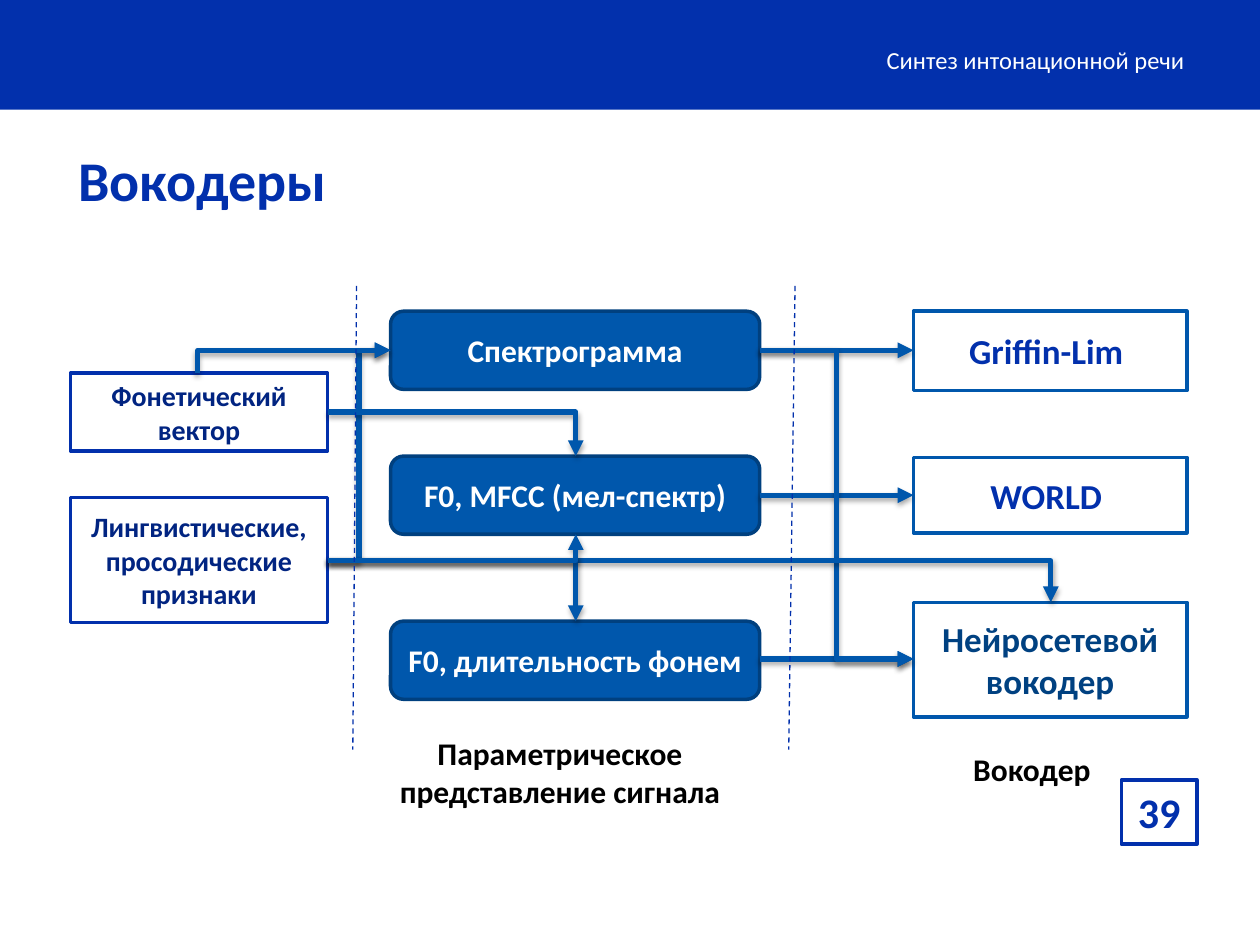
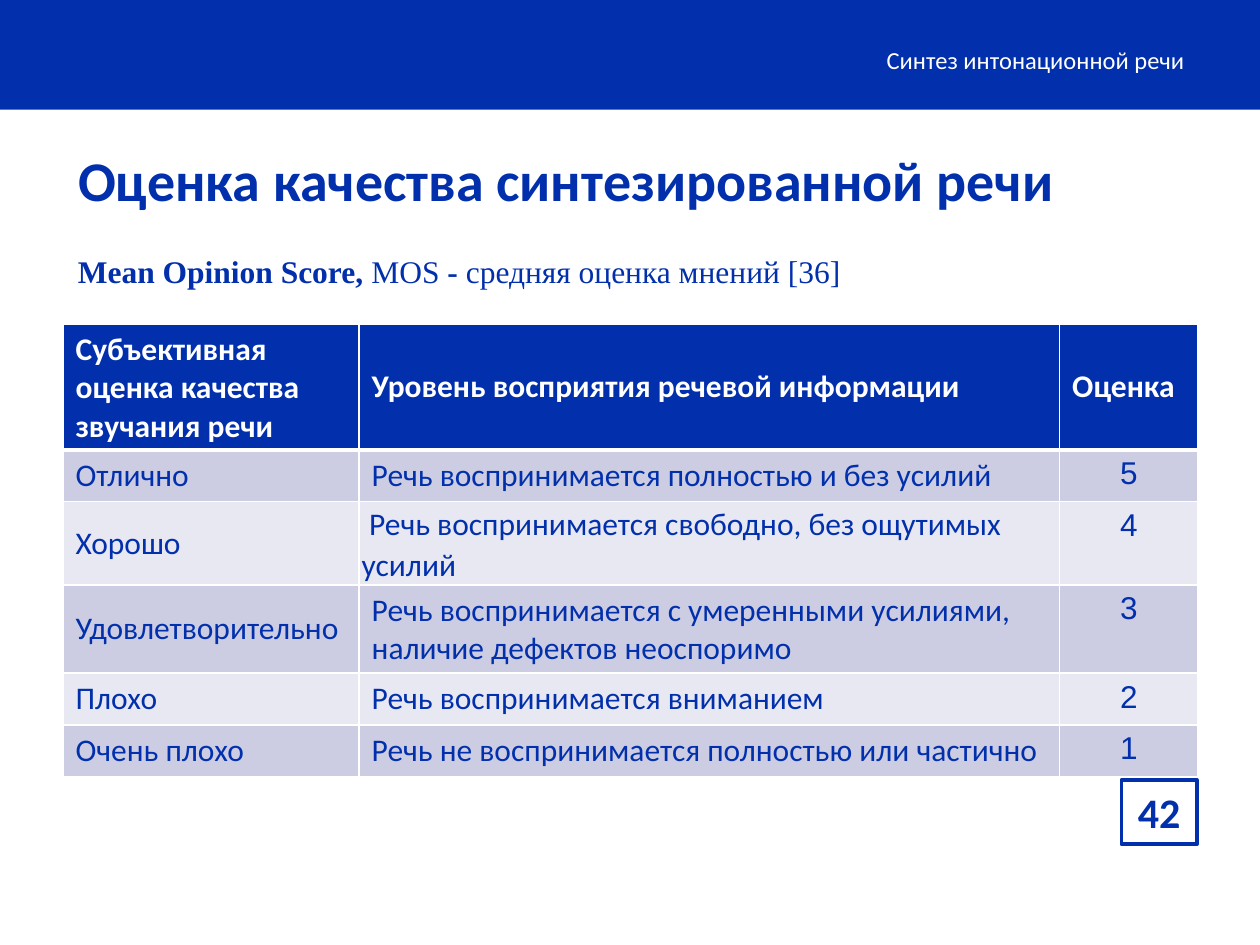
from dataclasses import dataclass

from lxml import etree
from pptx import Presentation
from pptx.dml.color import RGBColor
from pptx.enum.dml import MSO_LINE
from pptx.enum.shapes import MSO_CONNECTOR as Link, MSO_SHAPE as Form
from pptx.enum.text import MSO_ANCHOR as Anchor, PP_ALIGN as Align
from pptx.oxml.ns import qn
from pptx.util import Inches, Pt


@dataclass(frozen=True)
class Theme:
    brand: str = "0230AC"
    accent: str = "0057AC"
    accent_edge: str = "00407F"
    feature_text: str = "012481"
    neural_text: str = "004181"
    white: str = "FFFFFF"
    black: str = "000000"
    row_dark: str = "CCCDE3"
    row_light: str = "E7E8F1"
    sans: str = "Calibri"
    serif: str = "Times New Roman"
    digits: str = "Arial"
    title: int = 32
    number: int = 24
    vocoder: int = 20
    text: int = 18
    feature: int = 16
    header: int = 14


THEME = Theme()


def assign(target, **values):
    for name, value in values.items():
        setattr(target, name, value)


def style_font(font, size, color, bold=False, name=THEME.sans):
    assign(font, size=Pt(size), bold=bold, name=name)
    font.color.rgb = RGBColor.from_string(color)


def write(frame, text, size, color, bold=True, align=Align.CENTER, anchor=Anchor.MIDDLE):
    assign(frame, word_wrap=True, vertical_anchor=anchor)
    para = frame.paragraphs[0]
    para.alignment = align
    span = para.add_run()
    span.text = text
    style_font(span.font, size, color, bold)


def add_box(page, area, fill, edge=None, form=Form.RECTANGLE):
    box = page.shapes.add_shape(form, *map(Inches, area))
    box.shadow.inherit = False
    box.fill.solid()
    box.fill.fore_color.rgb = RGBColor.from_string(fill)
    if edge:
        box.line.color.rgb = RGBColor.from_string(edge)
        box.line.width = Pt(2)
    else:
        box.line.fill.background()
    return box


def add_node(page, area, text, size, color, fill, edge, form=Form.RECTANGLE):
    box = add_box(page, area, fill, edge, form)
    assign(box.text_frame, margin_left=Inches(0.05), margin_right=Inches(0.05))
    write(box.text_frame, text, size, color)


def add_label(page, area, text, size, color, **layout):
    box = page.shapes.add_textbox(*map(Inches, area))
    write(box.text_frame, text, size, color, **layout)


def add_line(page, start, end, color, width, link=Link.STRAIGHT):
    line = page.shapes.add_connector(link, *map(Inches, start + end))
    line.line.color.rgb = RGBColor.from_string(color)
    line.line.width = Pt(width)
    effects = etree.SubElement(line._element.spPr, qn("a:effectLst"))
    return line, effects


def add_arrow(page, start, end, preset="line", tip="tailEnd"):
    link = Link.STRAIGHT if preset == "line" else Link.ELBOW
    line, effects = add_line(page, start, end, THEME.accent, 3, link)
    line._element.spPr.find(qn("a:prstGeom")).set("prst", preset)
    etree.SubElement(line.line._get_or_add_ln(), qn(f"a:{tip}"), type="triangle")
    shadow = etree.SubElement(
        effects, qn("a:outerShdw"), blurRad=str(Pt(3.1)), dist=str(Pt(1.8)),
        dir="5400000", rotWithShape="0")
    tint = etree.SubElement(shadow, qn("a:srgbClr"), val=THEME.black)
    etree.SubElement(tint, qn("a:alpha"), val="35000")


def add_divider(page, start, end):
    line, _ = add_line(page, start, end, THEME.brand, 0.75)
    line.line.dash_style = MSO_LINE.DASH


def add_page(deck, title, number):
    page = deck.slides.add_slide(deck.slide_layouts[5])
    add_box(page, (0, 0, 10, 0.87), THEME.brand)
    add_label(page, (4.41, 0.27, 5.09, 0.4), "Синтез интонационной речи",
              THEME.header, THEME.white, bold=False, align=Align.RIGHT)
    heading = page.shapes.title
    assign(heading, left=Inches(0.52), top=Inches(1.05), width=Inches(9), height=Inches(0.75))
    write(heading.text_frame, title, THEME.title, THEME.brand, align=Align.LEFT)
    add_node(page, (8.9, 6.19, 0.6, 0.51), number, THEME.number, THEME.brand,
             THEME.white, THEME.brand)
    return page


def build_vocoders(deck):
    page = add_page(deck, "Вокодеры", "39")

    for text, top, height in (
            ("Фонетический вектор", 2.96, 0.62),
            ("Лингвистические, просодические признаки", 3.95, 0.99)):
        add_node(page, (0.56, top, 2.04, height), text, THEME.feature,
                 THEME.feature_text, THEME.white, THEME.brand)
    for text, top in (("Спектрограмма", 2.47), ("F0, MFCC (мел-спектр)", 3.62),
                      ("F0, длительность фонем", 4.93)):
        add_node(page, (3.1, top, 2.93, 0.62), text, THEME.text, THEME.white,
                 THEME.accent, THEME.accent_edge, Form.ROUNDED_RECTANGLE)
    for text, top, height, color in (
            ("Griffin-Lim ", 2.47, 0.63, THEME.brand),
            ("WORLD ", 3.63, 0.6, THEME.brand),
            ("Нейросетевой вокодер", 4.78, 0.91, THEME.neural_text)):
        add_node(page, (7.25, top, 2.17, height), text, THEME.vocoder, color,
                 THEME.white, THEME.accent)

    add_label(page, (3.06, 5.78, 2.77, 0.83), "Параметрическое представление сигнала",
              THEME.text, THEME.black, anchor=Anchor.TOP)
    add_label(page, (7.48, 5.9, 1.42, 0.34), "Вокодер",
              THEME.text, THEME.black, anchor=Anchor.TOP)

    spectrum, neural, features = (3.1, 2.78), (7.25, 5.23), (2.6, 4.45)
    for row in (2.78, 3.93, 5.23):
        add_arrow(page, (6.03, row), (7.25, row))
    add_arrow(page, (6.03, 2.78), neural, "bentConnector3")
    add_arrow(page, features, spectrum, "bentConnector3")
    add_arrow(page, spectrum, (1.57, 2.96), "bentConnector2", "headEnd")
    add_arrow(page, (2.6, 3.27), (4.57, 3.62), "bentConnector2")
    for target in ((8.34, 4.78), (4.57, 4.93), (4.57, 4.24)):
        add_arrow(page, features, target, "bentConnector2")

    add_divider(page, (2.83, 2.27), (2.8, 5.95))
    add_divider(page, (6.31, 2.27), (6.26, 5.95))


def fill_cell(cell, fill, top, bottom):
    props = cell._tc.get_or_add_tcPr()
    for side, width in (("lnL", 1), ("lnR", 1), ("lnT", top), ("lnB", bottom)):
        edge = etree.SubElement(props, qn(f"a:{side}"), w=str(Pt(width)))
        paint = etree.SubElement(edge, qn("a:solidFill"))
        etree.SubElement(paint, qn("a:srgbClr"), val=THEME.white)
    cell.fill.solid()
    cell.fill.fore_color.rgb = RGBColor.from_string(fill)


def write_cell(cell, text, column, header):
    is_score = column == 2 and not header
    cell.vertical_anchor = Anchor.MIDDLE if header or column == 0 else Anchor.TOP
    para = cell.text_frame.paragraphs[0]
    para.text = text
    para.alignment = Align.CENTER if is_score else Align.LEFT
    for span in para.runs:
        style_font(span.font, THEME.text, THEME.white if header else THEME.brand,
                   header, THEME.digits if is_score else THEME.sans)


def add_scale(page, area, widths, rows):
    table = page.shapes.add_table(len(rows), len(widths), *map(Inches, area)).table
    for column, width in zip(table.columns, widths):
        column.width = Inches(width)
    for i, values in enumerate(rows):
        table.rows[i].height = Inches(0.41)
        fill = THEME.brand if i == 0 else THEME.row_dark if i % 2 else THEME.row_light
        for j, text in enumerate(values):
            cell = table.cell(i, j)
            fill_cell(cell, fill, 3 if i == 1 else 1, 3 if i == 0 else 1)
            write_cell(cell, text, j, i == 0)
    return table


def build_quality(deck):
    page = add_page(deck, "Оценка качества синтезированной речи", "42")

    box = page.shapes.add_textbox(*map(Inches, (0.52, 1.95, 9, 0.4)))
    box.text_frame.word_wrap = True
    para = box.text_frame.paragraphs[0]
    for text, bold in (("Mean Opinion Score, ", True), ("MOS ", False), ("- ", True),
                       ("средняя оценка мнений [36]", False)):
        span = para.add_run()
        span.text = text
        style_font(span.font, THEME.text, THEME.brand, bold, THEME.serif)

    table = add_scale(page, (0.5, 2.57, 9, 2.46), (2.35, 5.56, 1.1), (
        ("Субъективная оценка качества\vзвучания речи",
         "Уровень восприятия речевой информации", "Оценка"),
        ("Отлично", "Речь воспринимается полностью и без усилий", "5"),
        ("Хорошо", "Речь воспринимается свободно, без ощутимых усилий", "4"),
        ("Удовлетворительно",
         "Речь воспринимается с умеренными усилиями, наличие дефектов неоспоримо", "3"),
        ("Плохо", "Речь воспринимается вниманием", "2"),
        ("Очень плохо", "Речь не воспринимается полностью или частично", "1")))
    good = table.cell(2, 1)
    assign(good, margin_left=Inches(0.02), margin_right=Inches(0.02),
           margin_top=Inches(0.01), margin_bottom=Inches(0.01),
           vertical_anchor=Anchor.MIDDLE)
    para = good.text_frame.paragraphs[0]
    para.line_spacing = 1.07
    para._p.get_or_add_pPr().set("indent", str(Inches(0.06)))


def main():
    deck = Presentation()
    assign(deck, slide_width=Inches(10), slide_height=Inches(7.5))
    build_vocoders(deck)
    build_quality(deck)
    deck.save("out.pptx")


if __name__ == "__main__":
    main()
